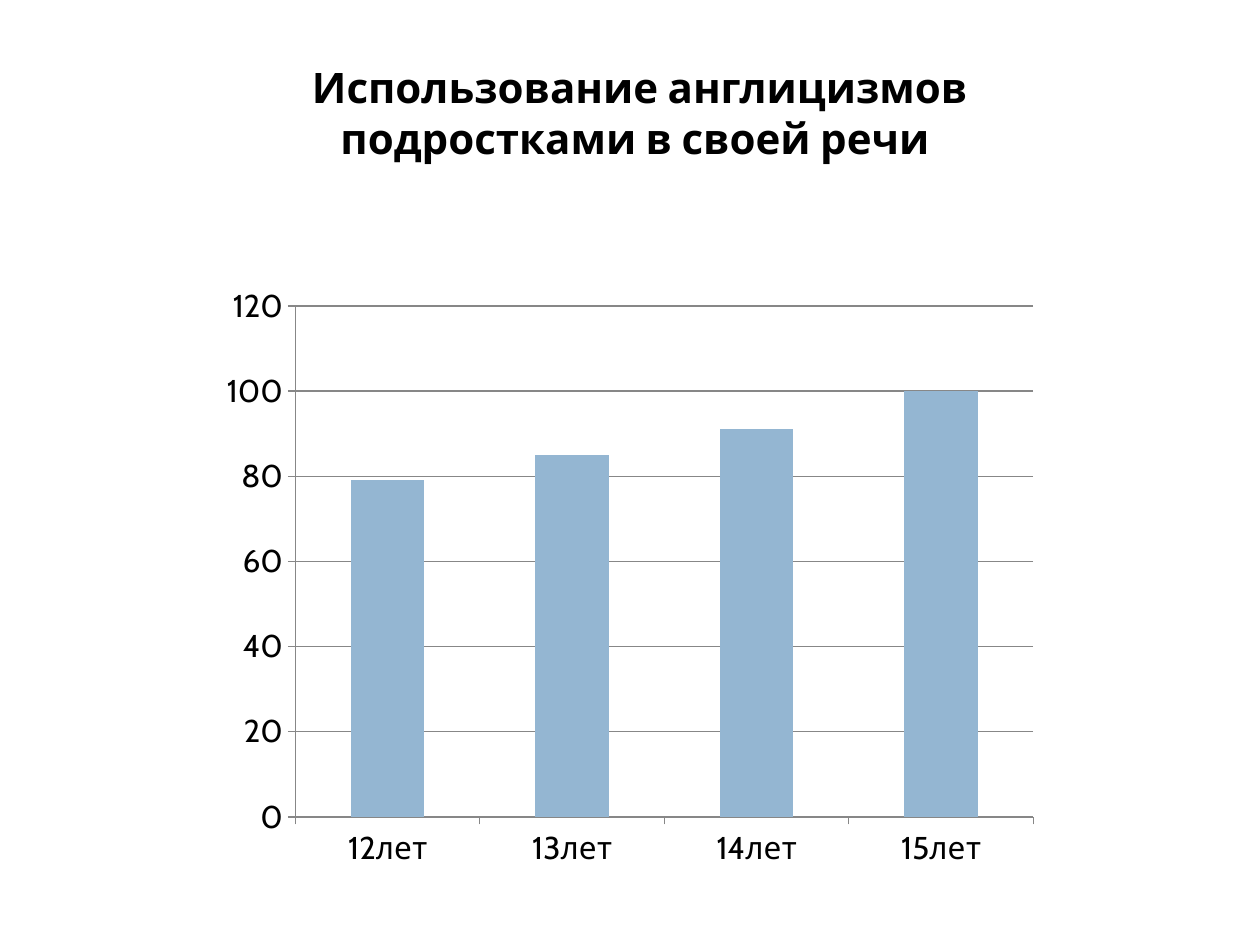
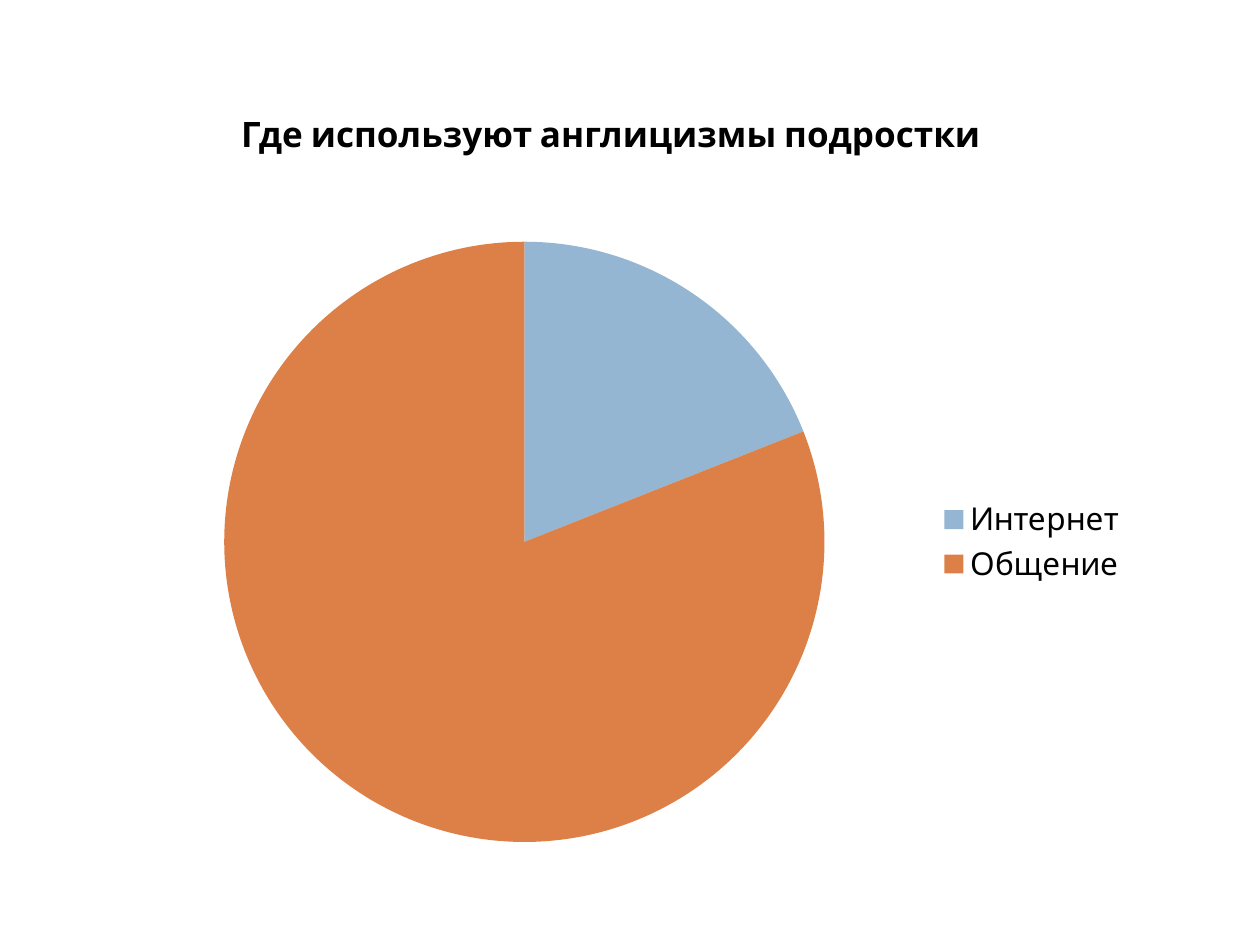
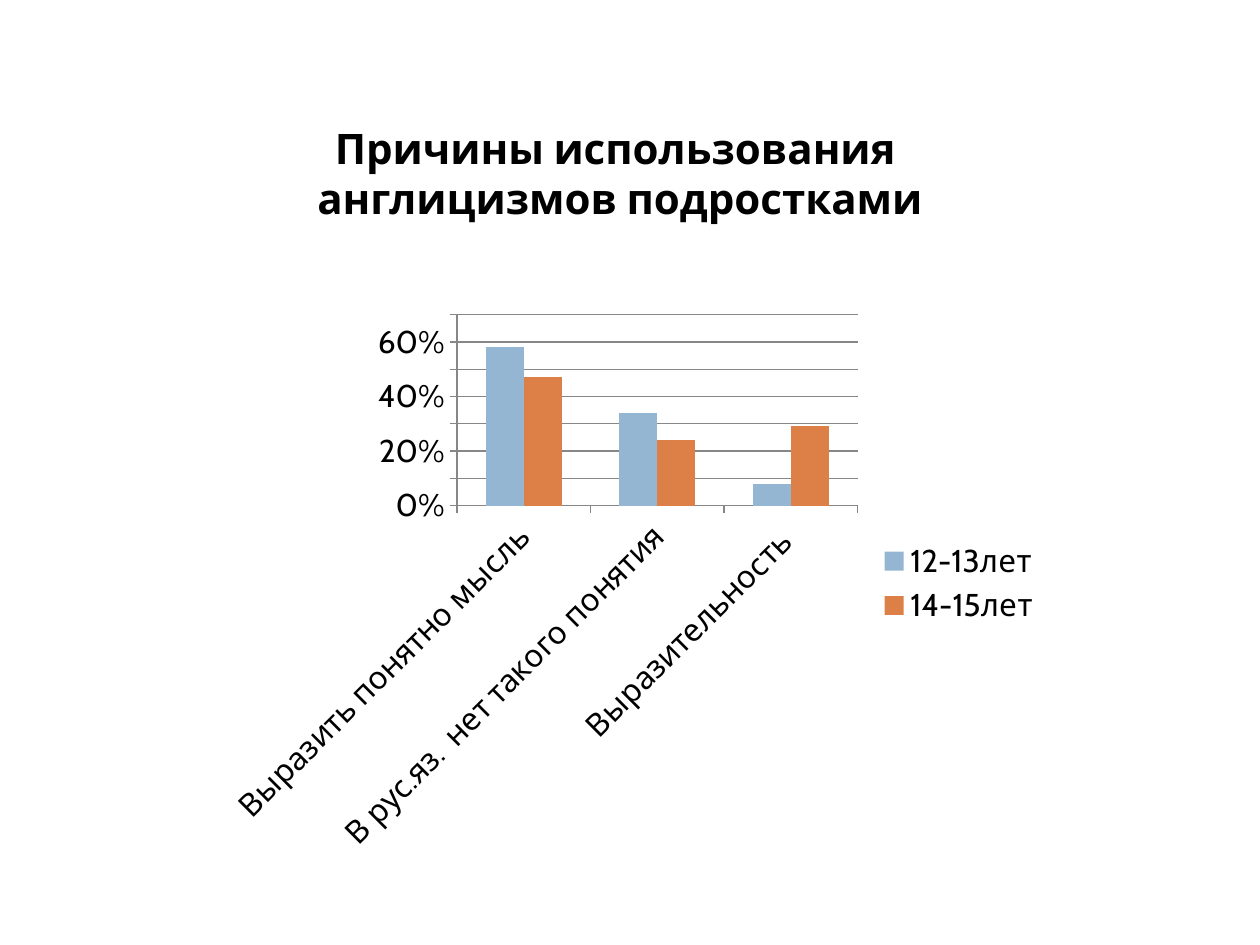
from pptx import Presentation
from pptx.chart import data
from pptx.dml import color
from pptx.enum import chart as charts, text
from pptx.oxml import ns
from pptx.util import Pt

# Shared look
BLACK, WHITE, GRID = "000000", "FFFFFF", "878787"
PALETTE = ["94B6D2", "DD8047"]
LABEL = {"name": "Cabin", "size": Pt(18), "bold": False}
TITLE = {"name": "Cabin", "bold": True}


def apply(target, values):
    for name, value in values.items():
        setattr(target, name, value)


def paint(fill, hex_value):
    fill.solid()
    fill.fore_color.rgb = color.RGBColor.from_string(hex_value)


def style_font(font, values):
    apply(font, values)
    paint(font.fill, BLACK)


def style_line(line):
    line.width = Pt(0.75)
    paint(line.fill, GRID)


def add_page(deck):
    page = deck.slides.add_slide(deck.slide_layouts[6])
    paint(page.background.fill, WHITE)
    return page


def add_title(page, words, place, size):
    box = page.shapes.add_textbox(*map(Pt, place))
    frame = box.text_frame
    apply(frame, {"word_wrap": True,
                  "auto_size": text.MSO_AUTO_SIZE.SHAPE_TO_FIT_TEXT})
    para = frame.paragraphs[0]
    para.alignment = text.PP_ALIGN.CENTER
    span = para.add_run()
    span.text = words
    style_font(span.font, TITLE | {"size": Pt(size)})


def add_chart(page, kind, place, categories, series, number_format="General"):
    table = data.CategoryChartData(number_format=number_format)
    table.categories = categories
    for name, values in series.items():
        table.add_series(name, values)
    chart = page.shapes.add_chart(kind, *map(Pt, place), table).chart
    chart.has_title = False
    chart.has_legend = False
    style_font(chart.font, LABEL)
    return chart


def add_legend(chart):
    chart.has_legend = True
    apply(chart.legend, {"position": charts.XL_LEGEND_POSITION.RIGHT,
                         "include_in_layout": False})
    style_font(chart.legend.font, LABEL)


def add_columns(page, place, categories, series, top, step,
                number_format="General"):
    chart = add_chart(page, charts.XL_CHART_TYPE.COLUMN_CLUSTERED, place,
                      categories, series, number_format)
    plot = chart.plots[0]
    apply(plot, {"gap_width": 150, "overlap": 0, "vary_by_categories": False})
    for bars, shade in zip(plot.series, PALETTE):
        paint(bars.format.fill, shade)

    # Axes and gridlines
    for axis in (chart.category_axis, chart.value_axis):
        apply(axis, {"major_tick_mark": charts.XL_TICK_MARK.OUTSIDE,
                     "minor_tick_mark": charts.XL_TICK_MARK.NONE})
        style_line(axis.format.line)
        style_font(axis.tick_labels.font, LABEL)
    apply(chart.value_axis, {"minimum_scale": 0, "maximum_scale": top,
                             "major_unit": step, "has_major_gridlines": True})
    apply(chart.value_axis.tick_labels, {"number_format": number_format,
                                         "number_format_is_linked": False})
    style_line(chart.value_axis.major_gridlines.format.line)
    return chart


def add_pie(page, place, categories, series):
    chart = add_chart(page, charts.XL_CHART_TYPE.PIE, place, categories, series)
    plot = chart.plots[0]
    plot.vary_by_categories = True
    for index, shade in enumerate(PALETTE):
        paint(plot.series[0].points[index].format.fill, shade)
    add_legend(chart)


def slant_categories(chart, degrees):
    body = chart.category_axis._element.find(ns.qn("c:txPr")).find(ns.qn("a:bodyPr"))
    body.set("rot", str(degrees * 60000))
    body.set("vert", "horz")


def main():
    deck = Presentation()
    apply(deck, {"slide_width": Pt(720), "slide_height": Pt(540)})

    # Use by age
    page = add_page(deck)
    add_columns(page, (120, 157, 480, 345.6),
                ["12лет", "13лет", "14лет", "15лет"],
                {"Series 1": [79, 85, 91, 100]}, top=120, step=20)
    add_title(page, "Использование англицизмов подростками в своей речи ",
              (105, 31.7, 521.3, 65.5), 24)

    # Where they are used
    page = add_page(deck)
    add_pie(page, (65.5, 128.2, 589.7, 362.9), ["Интернет ", "Общение"],
            {"Series 1": [19, 81]})
    add_title(page, "Где используют англицизмы подростки ",
              (127.4, 60.5, 447.8, 31.7), 20)

    # Reasons by age group
    page = add_page(deck)
    reasons = add_columns(
        page, (121.7, 173.5, 480, 319.7),
        ["Выразить понятно мысль", "В рус.яз.  нет такого понятия",
         "Выразительность "],
        {"12-13лет": [0.58, 0.34, 0.08], "14-15лет": [0.47, 0.24, 0.29]},
        top=0.7, step=0.1, number_format="0%")
    add_legend(reasons)
    slant_categories(reasons, -45)
    add_title(page, "Причины использования  англицизмов подростками",
              (139, 66.2, 430.6, 65.5), 24)

    deck.save("out.pptx")


if __name__ == "__main__":
    main()
